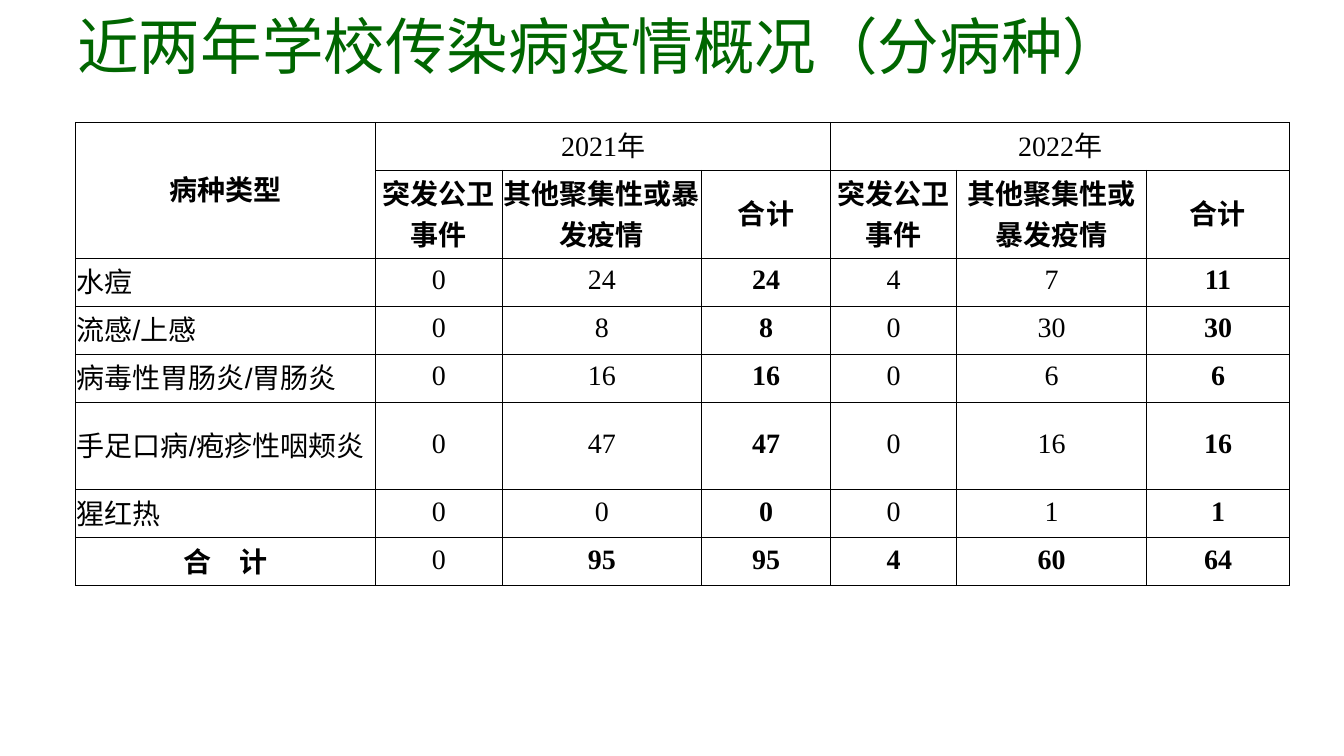
from dataclasses import dataclass

from lxml import etree
from pptx import Presentation
from pptx.dml.color import RGBColor
from pptx.enum.text import MSO_ANCHOR, PP_ALIGN
from pptx.oxml.ns import qn
from pptx.util import Cm, Pt

MIDDLE = MSO_ANCHOR.MIDDLE
LEFT, CENTER = PP_ALIGN.LEFT, PP_ALIGN.CENTER
COLORS = {"title": "006600", "text": "000000", "border": "000000"}
SERIF, SANS, HAN = "Times New Roman", "Arial", "Noto Sans CJK SC"

WIDTHS = (7.57, 3.18, 5.03, 3.25, 3.18, 4.78, 3.61)
ROW, TALL = 1.21, 2.21
INSETS = {"margin_left": Cm(0.03), "margin_top": Cm(0.03),
          "margin_right": Cm(0.03), "margin_bottom": Cm(0.11)}
YEARS = {1: "2021", 4: "2022"}
GROUPS = (("突发公卫事件", HAN), ("其他聚集性或暴发疫情", HAN), ("合计", SANS))
SUMS = (3, 6)


@dataclass
class Run:
    text: str
    font: str
    bold: bool = False
    size: float = 20
    color: str = "text"


@dataclass
class Disease:
    name: str
    counts: tuple[int, ...]
    total: bool = False
    height: float = ROW


DISEASES = (
    Disease("水痘", (0, 24, 24, 4, 7, 11)),
    Disease("流感/上感", (0, 8, 8, 0, 30, 30)),
    Disease("病毒性胃肠炎/胃肠炎", (0, 16, 16, 0, 6, 6)),
    Disease("手足口病/疱疹性咽颊炎", (0, 47, 47, 0, 16, 16), height=TALL),
    Disease("猩红热", (0, 0, 0, 0, 1, 1)),
    Disease("合　计", (0, 95, 95, 4, 60, 64), total=True),
)


def write(para, runs: tuple[Run, ...], align=CENTER) -> None:
    para.alignment = align
    for item in runs:
        run = para.add_run()
        run.text = item.text
        style = {"name": item.font, "size": Pt(item.size), "bold": item.bold}
        for key, value in style.items():
            setattr(run.font, key, value)
        run.font.color.rgb = RGBColor.from_string(COLORS[item.color])
        asian = etree.Element(qn("a:ea"), typeface=HAN)
        run.font._element.find(qn("a:latin")).addnext(asian)


def border(cell) -> None:
    props = cell._tc.get_or_add_tcPr()
    for place, side in enumerate(("lnL", "lnR", "lnT", "lnB")):
        line = etree.Element(qn(f"a:{side}"), w=str(Pt(0.5)))
        fill = etree.SubElement(line, qn("a:solidFill"))
        etree.SubElement(fill, qn("a:srgbClr"), val=COLORS["border"])
        props.insert(place, line)


def add_title(slide) -> None:
    box = slide.shapes.add_textbox(Cm(1.7), Cm(0), Cm(29.21), Cm(2.51))
    frame = box.text_frame
    frame.word_wrap = True
    frame.vertical_anchor = MIDDLE
    para = frame.paragraphs[0]
    para.line_spacing = 0.9
    title = Run("近两年学校传染病疫情概况（分病种）", SERIF, size=44, color="title")
    write(para, (title,), LEFT)


def add_grid(slide):
    """Add the empty bordered table with its merged heads."""
    heights = (ROW, TALL, *(item.height for item in DISEASES))
    table = slide.shapes.add_table(
        len(heights), len(WIDTHS), Cm(1.9), Cm(3.08),
        Cm(sum(WIDTHS)), Cm(sum(heights))).table
    table.first_row = table.horz_banding = False
    for col, width in zip(table.columns, WIDTHS):
        col.width = Cm(width)
    for row, height in zip(table.rows, heights):
        row.height = Cm(height)
    for cell in table.iter_cells():
        for key, value in INSETS.items():
            setattr(cell, key, value)
        cell.vertical_anchor = MIDDLE
        cell.fill.background()
        border(cell)
    table.cell(0, 0).merge(table.cell(1, 0))
    for col in YEARS:
        table.cell(0, col).merge(table.cell(0, col + len(GROUPS) - 1))
    return table


def fill_table(table) -> None:
    def put(row: int, col: int, *runs: Run, align=CENTER) -> None:
        write(table.cell(row, col).text_frame.paragraphs[0], runs, align)

    put(0, 0, Run("病种类型", SANS, True))
    for first, year in YEARS.items():
        put(0, first, Run(year, SERIF), Run("年", HAN))
        for col, (text, font) in enumerate(GROUPS, first):
            put(1, col, Run(text, font, True))
    for row, item in enumerate(DISEASES, 2):
        put(row, 0, Run(item.name, SANS, item.total),
            align=CENTER if item.total else LEFT)
        for col, count in enumerate(item.counts, 1):
            bold = col in SUMS or (item.total and col > 1)
            put(row, col, Run(str(count), SERIF, bold))


def main() -> None:
    deck = Presentation()
    deck.slide_width, deck.slide_height = Cm(33.87), Cm(19.05)
    slide = deck.slides.add_slide(deck.slide_layouts[6])
    add_title(slide)
    fill_table(add_grid(slide))
    deck.save("out.pptx")


if __name__ == "__main__":
    main()
